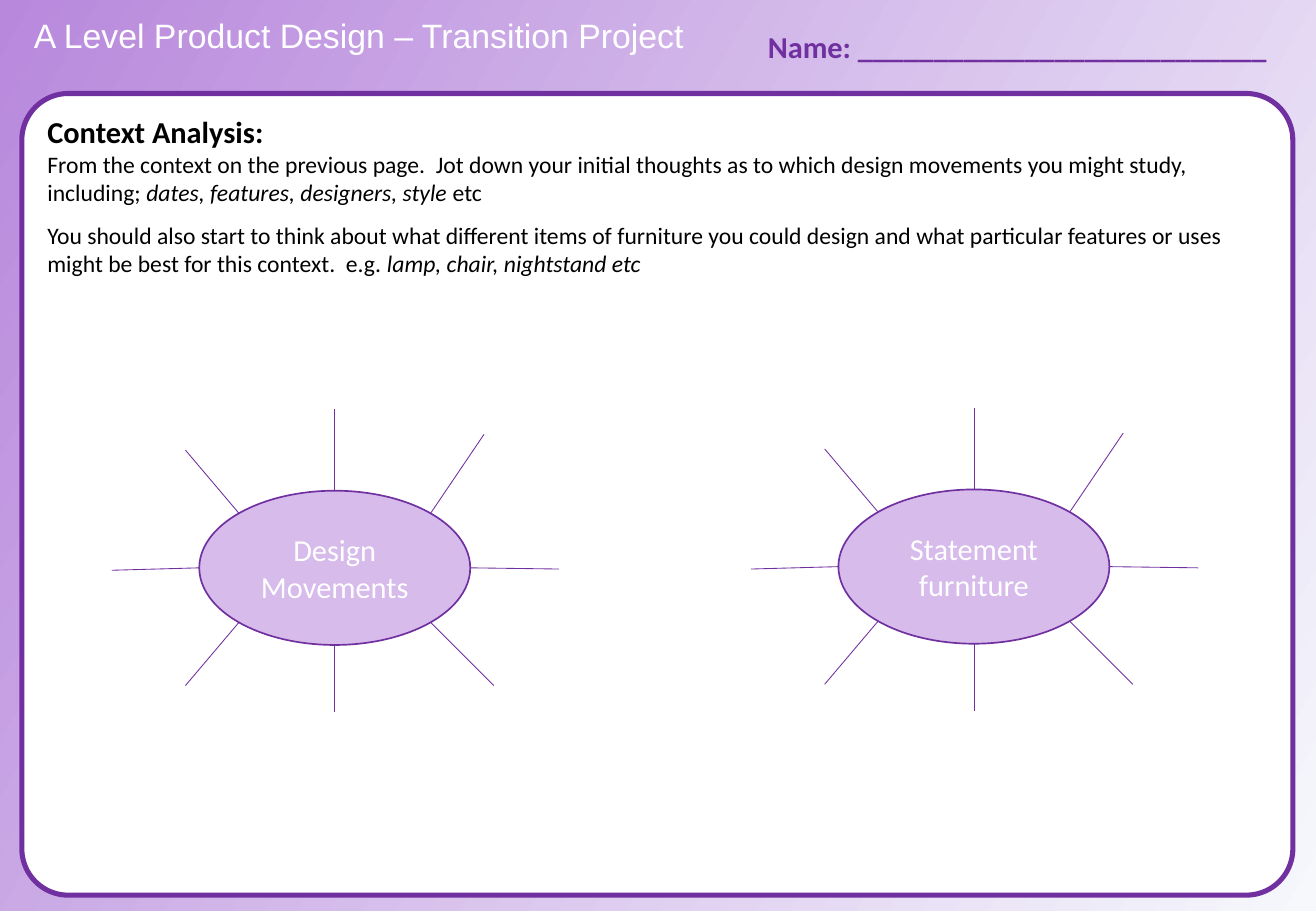
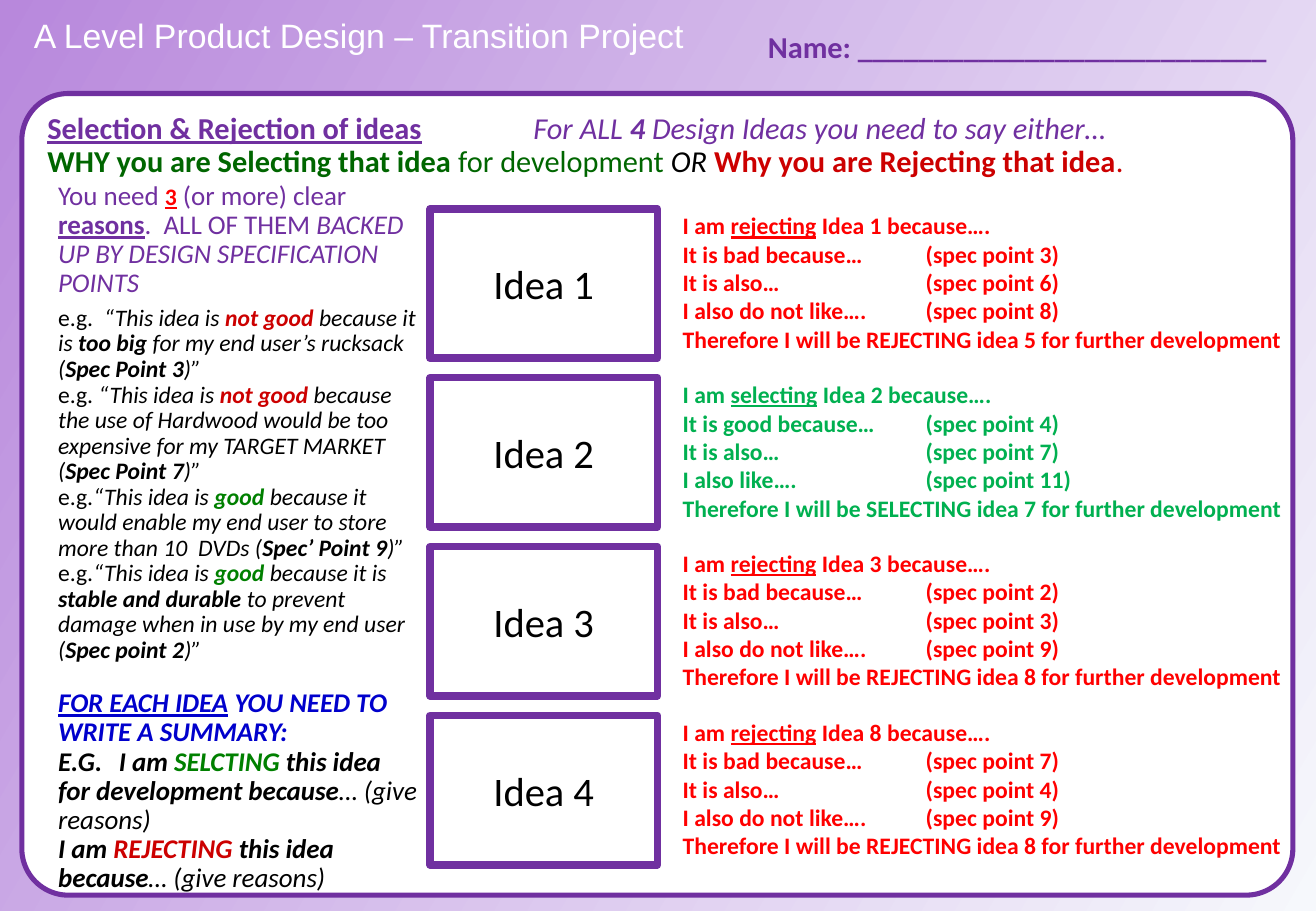
"""Build two worksheet slides for a product design transition project."""
import math
from dataclasses import dataclass
from typing import NamedTuple, Optional

import lxml.etree
import pptx
import pptx.dml.color
import pptx.enum.shapes
import pptx.enum.text
import pptx.oxml.ns
import pptx.util

Inches = pptx.util.Inches
Pt = pptx.util.Pt
SHAPES = pptx.enum.shapes.MSO_SHAPE
ANCHORS = pptx.enum.text.MSO_ANCHOR
ALIGNMENTS = pptx.enum.text.PP_ALIGN

PURPLE = "7030A0"
LILAC = "D6BBEB"
WHITE = "FFFFFF"
BLACK = "000000"
RED = "FF0000"
GREEN = "00B050"
DARK_RED = "CC0000"
MID_GREEN = "008000"
DARK_GREEN = "006600"
BLUE = "0000CC"
GRADIENT = ("F6F8FC", "B888DC")


class Box(NamedTuple):
    left: float
    top: float
    width: float
    height: float

    def lengths(self) -> list:
        return [Inches(value) for value in self]


@dataclass(frozen=True)
class Style:
    size: Optional[float] = None
    colour: Optional[str] = None
    bold: Optional[bool] = None
    italic: Optional[bool] = None
    underline: Optional[bool] = None
    name: Optional[str] = None


class Run(NamedTuple):
    text: str
    style: Style = Style()


@dataclass(frozen=True)
class Line:
    style: Style
    runs: tuple
    centred: bool = False
    spacing: Optional[float] = None
    before: float = 0
    tab: Optional[float] = None


class Verdict(NamedTuple):
    action: str
    colour: str
    quality: str
    liking: str


class Idea(NamedTuple):
    verdict: Verdict
    number: int
    summary_number: int
    points: tuple


class Spoke(NamedTuple):
    angle: int
    across: float
    down: float


class SpiderDiagram(NamedTuple):
    label: str
    oval: Box


BOLD = Style(bold=True)
LIGHT = Style(bold=False)
ITALIC = Style(italic=True)
UPRIGHT = Style(italic=False)
UNDERLINE = Style(underline=True)
BOLD_UNDERLINE = Style(bold=True, underline=True)
BODY = Style(14, BLACK, name="Calibri")
EXAMPLE = Style(14, BLACK, italic=True, name="Calibri")
SUMMARY = Style(16, BLACK, bold=True, italic=True, name="Calibri")
GOOD = Style(colour=MID_GREEN, bold=True)
BAD = Style(colour=DARK_RED, bold=True)

FRAME = Box(0.18, 0.77, 10.46, 6.6)

SPOKES = (
    Spoke(0, 0.73, 0.01),
    Spoke(45, 0.52, 0.52),
    Spoke(90, 0, 0.55),
    Spoke(135, -0.44, 0.52),
    Spoke(180, -0.72, 0.02),
    Spoke(225, -0.44, -0.52),
    Spoke(270, 0, -0.67),
    Spoke(315, 0.44, -0.65),
)
DIAGRAMS = (
    SpiderDiagram("Design Movements", Box(1.64, 4.04, 2.23, 1.27)),
    SpiderDiagram("Statement furniture", Box(6.9, 4.03, 2.23, 1.27)),
)

REJECT = Verdict("rejecting", RED, "bad", "do not like")
SELECT = Verdict("selecting", GREEN, "good", "like")
IDEAS = (
    Idea(REJECT, 1, 5, (3, 6, 8)),
    Idea(SELECT, 2, 7, (4, 7, 11)),
    Idea(REJECT, 3, 8, (2, 3, 9)),
    Idea(REJECT, 8, 8, (7, 4, 9)),
)
IDEA_PITCH = 1.39

CONTEXT_LINES = (
    Line(Style(18, BLACK, bold=True, name="Calibri"), (Run("Context Analysis:"),)),
    Line(BODY, (
        Run("From the context on the previous page.  Jot down your initial thoughts as to "
            "which design movements you might study, including; "),
        Run("dates, features, designers, style ", ITALIC),
        Run("etc"),
    )),
    Line(BODY, (
        Run("You should also start to think about what different items of furniture you could "
            "design and what particular features or uses might be best for this context.  e.g. "),
        Run("lamp, chair, nightstand etc", ITALIC),
    ), before=8.5),
)

SELECTION_LINES = (
    Line(Style(18, PURPLE, name="Calibri"), (
        Run("Selection & Rejection of ideas", BOLD_UNDERLINE),
        Run("\tFor ALL ", ITALIC),
        Run("4", Style(bold=True, italic=True)),
        Run(" Design Ideas you need to say either…", ITALIC),
    ), spacing=0.9, tab=4),
    Line(Style(18, DARK_GREEN, name="Calibri"), (
        Run("WHY you are Selecting that idea", BOLD),
        Run(" for development "),
        Run("OR ", Style(colour=BLACK, italic=True)),
        Run("Why you are Rejecting that idea", BAD),
        Run(".", Style(colour=DARK_RED)),
    ), spacing=0.9),
)


def example(lead: str, verdict: Run, reason: tuple, point: str, before: float = 0) -> Line:
    """Return one sample sentence that quotes a specification point."""
    runs = (Run(lead, UPRIGHT), Run("“This idea is "), verdict, *reason,
            Run(point, BOLD), Run(")”"))
    return Line(EXAMPLE, runs, spacing=0.9, before=before)


GUIDANCE_LINES = (
    Line(Style(16, PURPLE, name="Calibri"), (
        Run("You need "),
        Run("3", Style(14, RED, bold=True, underline=True)),
        Run(" (or more) clear "),
        Run("reasons", BOLD_UNDERLINE),
        Run(".  ALL OF THEM "),
        Run("BACKED UP BY DESIGN SPECIFICATION POINTS", ITALIC),
    ), spacing=0.9),
    example("e.g.  ", Run("not good", BAD), (
        Run(" because it is "), Run("too big", BOLD), Run(" for my end user’s rucksack ("),
    ), "Spec Point 3", before=4.4),
    example("e.g. ", Run("not good ", BAD), (
        Run("because the use of Hardwood would be too expensive for my TARGET MARKET ("),
    ), "Spec Point 7"),
    example("e.g.", Run("good ", GOOD), (
        Run("because it would enable my end user to store more than 10  DVDs ("),
    ), "Spec’ Point 9"),
    example("e.g.", Run("good ", GOOD), (
        Run("because it is "), Run("stable and durable", BOLD),
        Run(" to prevent damage when in use by my end user ("),
    ), "Spec point 2"),
    Line(Style(16, BLUE, bold=True, italic=True, name="Calibri"), (
        Run("FOR EACH IDEA", UNDERLINE), Run(" YOU NEED TO WRITE A SUMMARY:"),
    ), spacing=0.9, before=15.4),
    Line(SUMMARY, (
        Run("E.G.\tI am "), Run("SELCTING", GOOD),
        Run(" this idea for development because"), Run("… (give reasons)", LIGHT),
    ), spacing=0.9, tab=0.5),
    Line(SUMMARY, (
        Run("I am "), Run("REJECTING", BAD),
        Run(" this idea because"), Run("… (give reasons)", LIGHT),
    ), spacing=0.9),
)


def colour(value: str) -> pptx.dml.color.RGBColor:
    """Convert a hex string to a colour."""
    return pptx.dml.color.RGBColor.from_string(value)


def apply_style(font, style: Style) -> None:
    """Set on a font only what the style states."""
    if style.size is not None:
        font.size = Pt(style.size)
    if style.colour is not None:
        font.color.rgb = colour(style.colour)
    for attribute in ("bold", "italic", "underline", "name"):
        value = getattr(style, attribute)
        if value is not None:
            setattr(font, attribute, value)


def write_lines(frame, lines: tuple) -> None:
    """Fill a text frame with styled paragraphs."""
    frame.word_wrap = True
    for index, line in enumerate(lines):
        paragraph = frame.add_paragraph() if index else frame.paragraphs[0]
        paragraph.alignment = ALIGNMENTS.CENTER if line.centred else ALIGNMENTS.LEFT
        paragraph.space_before = Pt(line.before)
        if line.spacing:
            paragraph.line_spacing = line.spacing
        if line.tab:
            properties = paragraph._p.get_or_add_pPr()
            stops = lxml.etree.SubElement(properties, pptx.oxml.ns.qn("a:tabLst"))
            lxml.etree.SubElement(stops, pptx.oxml.ns.qn("a:tab"),
                                  pos=str(Inches(line.tab)), algn="l")
        apply_style(paragraph.font, line.style)
        for part in line.runs:
            run = paragraph.add_run()
            run.text = part.text
            apply_style(run.font, part.style)


def add_panel(slide, kind, box: Box, fill: str, line_width: float, lines: tuple,
              anchor=ANCHORS.MIDDLE):
    """Add a filled shape with a purple outline and text."""
    shape = slide.shapes.add_shape(kind, *box.lengths())
    shape.shadow.inherit = False
    shape.fill.solid()
    shape.fill.fore_color.rgb = colour(fill)
    shape.line.color.rgb = colour(PURPLE)
    shape.line.width = Pt(line_width)
    shape.text_frame.vertical_anchor = anchor
    write_lines(shape.text_frame, lines)
    return shape


def add_text(slide, box: Box, lines: tuple) -> None:
    """Add a text box that grows with its text."""
    frame = slide.shapes.add_textbox(*box.lengths()).text_frame
    write_lines(frame, lines)
    frame.auto_size = pptx.enum.text.MSO_AUTO_SIZE.SHAPE_TO_FIT_TEXT


def add_page(presentation, lines: tuple):
    """Add a slide with the shared background, header and framed text."""
    slide = presentation.slides.add_slide(presentation.slide_layouts[6])
    fill = slide.background.fill
    fill.gradient()
    fill.gradient_angle = 150
    for stop, value in zip(fill.gradient_stops, GRADIENT):
        stop.color.rgb = colour(value)
    frame = add_panel(slide, SHAPES.ROUNDED_RECTANGLE, FRAME, WHITE, 3, lines, ANCHORS.TOP)
    frame.adjustments[0] = 0.058
    add_text(slide, Box(0.18, 0.07, 6.03, 0.44), (
        Line(Style(20, WHITE, name="Arial"),
             (Run("A Level Product Design – Transition Project"),)),))
    add_text(slide, Box(6.22, 0.18, 4.45, 0.4), (
        Line(Style(18, PURPLE, bold=True, name="Calibri"),
             (Run("Name: ___________________________"),)),))
    return slide


def add_diagram(slide, diagram: SpiderDiagram) -> None:
    """Add a labelled oval with spokes at every eighth of a turn."""
    oval = diagram.oval
    label = Line(Style(18, WHITE, name="Calibri"), (Run(diagram.label),), centred=True)
    add_panel(slide, SHAPES.OVAL, oval, LILAC, 1, (label,))
    for spoke in SPOKES:
        angle = math.radians(spoke.angle)
        x = oval.left + oval.width / 2 * (1 + math.cos(angle))
        y = oval.top + oval.height / 2 * (1 + math.sin(angle))
        connector = slide.shapes.add_connector(
            pptx.enum.shapes.MSO_CONNECTOR.STRAIGHT, Inches(x), Inches(y),
            Inches(x + spoke.across), Inches(y + spoke.down))
        connector.line.color.rgb = colour(PURPLE)
        connector.line.width = Pt(0.5)
        lxml.etree.SubElement(connector._element.spPr, pptx.oxml.ns.qn("a:effectLst"))


def add_idea(slide, index: int, idea: Idea) -> None:
    """Add an idea box and the verdict beside it."""
    offset = index * IDEA_PITCH
    label = Line(Style(24, BLACK, name="Calibri"), (Run(f"Idea {index + 1}"),), centred=True)
    add_panel(slide, SHAPES.RECTANGLE, Box(3.54, 1.72 + offset, 1.87, 1.23), WHITE, 4.5, (label,))
    verdict = idea.verdict
    style = Style(14, verdict.colour, bold=True, name="Calibri")
    openings = (f"It is {verdict.quality} because…", "It is also…", f"I also {verdict.liking}….")
    reasons = (Line(style, (Run(f"{opening}\t(spec point {point})"),), tab=2)
               for opening, point in zip(openings, idea.points))
    add_text(slide, Box(5.52, 1.69 + offset, 6.54, 1.28), (
        Line(style, (Run("I am "), Run(verdict.action, UNDERLINE),
                     Run(f" Idea {idea.number} because…."))),
        *reasons,
        Line(style, (Run(f"Therefore I will be {verdict.action.upper()} idea "
                         f"{idea.summary_number} for further development"),)),
    ))


def main() -> None:
    """Build and save the presentation."""
    presentation = pptx.Presentation()
    presentation.slide_width = Inches(10.83)
    presentation.slide_height = Inches(7.5)
    context_slide = add_page(presentation, CONTEXT_LINES)
    for diagram in DIAGRAMS:
        add_diagram(context_slide, diagram)
    selection_slide = add_page(presentation, SELECTION_LINES)
    for index, idea in enumerate(IDEAS):
        add_idea(selection_slide, index, idea)
    add_text(selection_slide, Box(0.38, 1.45, 3.15, 6.01), GUIDANCE_LINES)
    presentation.save("out.pptx")


if __name__ == "__main__":
    main()
